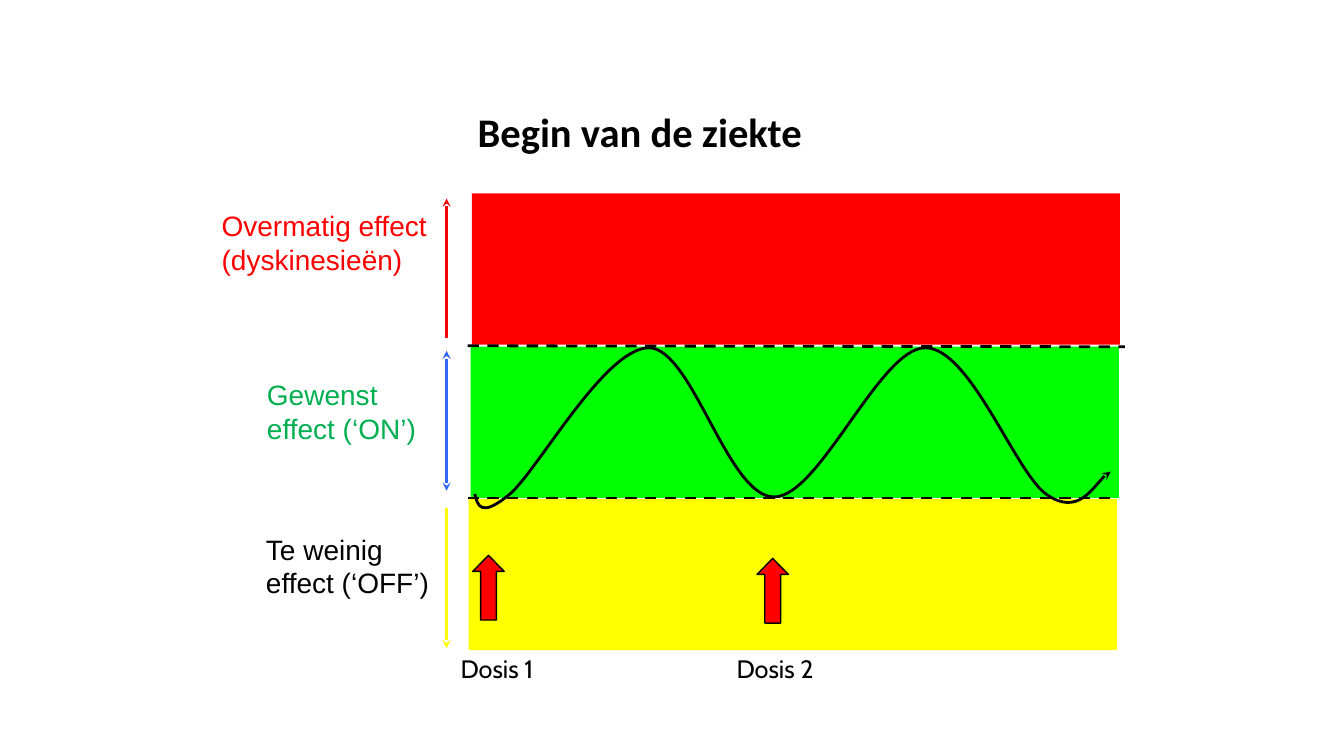
from lxml import etree
from pptx import Presentation
from pptx import util as u
from pptx.dml import color
from pptx.enum import dml, shapes, text
from pptx.oxml import ns

Pt = u.Pt
rgb = color.RGBColor.from_string


def add_text(wording, box, font_name, size, hex_color, align, bold=False, inset=True):
    shape = slide.shapes.add_textbox(*map(Pt, box))
    frame = shape.text_frame
    frame.word_wrap = True
    if not inset:
        frame.margin_left = frame.margin_right = frame.margin_top = frame.margin_bottom = 0
        frame.vertical_anchor = text.MSO_ANCHOR.MIDDLE
    paragraph = frame.paragraphs[0]
    paragraph.text = wording
    paragraph.alignment = align
    paragraph.font.name = font_name
    paragraph.font.size = Pt(size)
    paragraph.font.bold = bold
    paragraph.font.color.rgb = rgb(hex_color)


def style_line(shape, hex_color, width, ends=()):
    shape.line.color.rgb = rgb(hex_color)
    shape.line.width = Pt(width)
    line = shape.line._get_or_add_ln()
    for end in ends:
        etree.SubElement(line, ns.qn(f"a:{end}"), type="stealth")


presentation = Presentation()
presentation.slide_width, presentation.slide_height = Pt(960), Pt(540)
slide = presentation.slides.add_slide(presentation.slide_layouts[6])
left, center = text.PP_ALIGN.LEFT, text.PP_ALIGN.CENTER

add_text("Begin van de ziekte ", (117.4, 72.7, 686, 42.5), "Calibri", 29, "000000",
         center, bold=True, inset=False)

bands = [(334.8, 356.4, "FFFF00"), (337, 138.2, "FF0000"), (336.2, 247.7, "00FF00")]
for x, y, fill in bands:
    band = slide.shapes.add_shape(shapes.MSO_SHAPE.RECTANGLE, Pt(x), Pt(y), Pt(463), Pt(108))
    band.shadow.inherit = False
    band.fill.solid()
    band.fill.fore_color.rgb = rgb(fill)
    band.line.fill.background()

labels = [
    ("Overmatig effect (dyskinesieën)", 151.2, 145.4, 188.6, "FF0000"),
    ("Gewenst effect (‘ON’)", 183.6, 266.4, 138.2, "00B050"),
    ("Te weinig effect (‘OFF’)", 182.9, 376.6, 138.2, "000000"),
]
for wording, x, y, width, hex_color in labels:
    add_text(wording, (x, y, width, 55.4), "Arial", 20, hex_color, left)

lines = [
    (319, 141.8, 319, 241.2, "FF0000", 1.75, ["headEnd"], False),
    (319, 250.6, 319, 350.6, "3366FF", 1.75, ["headEnd", "tailEnd"], False),
    (319, 463, 319, 362.9, "FFFF00", 1.75, ["headEnd"], False),
    (334, 247, 803.5, 247.7, "000000", 2, [], True),
    (334, 355.7, 797.8, 355.7, "000000", 2, [], True),
]
for x1, y1, x2, y2, hex_color, width, ends, dashed in lines:
    connector = slide.shapes.add_connector(
        shapes.MSO_CONNECTOR.STRAIGHT, Pt(x1), Pt(y1), Pt(x2), Pt(y2))
    if dashed:
        connector.line.dash_style = dml.MSO_LINE.DASH
    style_line(connector, hex_color, width, ends)
    etree.SubElement(connector._element.spPr, ns.qn("a:effectLst"))

doses = [("Dosis 1", 337.7, 396.7, 315.4), ("Dosis 2", 540.7, 398.9, 514.1)]
for wording, arrow_x, arrow_y, label_x in doses:
    arrow = slide.shapes.add_shape(
        shapes.MSO_SHAPE.UP_ARROW, Pt(arrow_x), Pt(arrow_y), Pt(22.5), Pt(46.2))
    arrow.shadow.inherit = False
    arrow.adjustments[1] = 0.51
    arrow.fill.solid()
    arrow.fill.fore_color.rgb = rgb("FF0000")
    style_line(arrow, "000000", 1)
    add_text(wording, (label_x, 463, 79.2, 28.8), "Cabin", 18, "000000", center)

wave = [
    (4.71, 4.9), (4.74, 5.02), (4.77, 5.14), (5.06, 4.9),
    (5.34, 4.66), (6, 3.45), (6.44, 3.45),
    (6.87, 3.46), (7.22, 4.93), (7.68, 4.93),
    (8.13, 4.93), (8.73, 3.45), (9.18, 3.45),
    (9.63, 3.45), (10.08, 4.71), (10.39, 4.91),
    (10.7, 5.12), (10.91, 4.72), (11.02, 4.68),
]
points = [(Pt(x * 72), Pt(y * 72)) for x, y in wave]
builder = slide.shapes.build_freeform(*points[0])
builder.add_line_segments(points[1:], close=False)
curve = builder.convert_to_shape()
curve.shadow.inherit = False
curve.fill.background()
style_line(curve, "000000", 2, ["tailEnd"])

segments = list(curve._element.iter(ns.qn("a:lnTo")))
outline = segments[0].getparent()
for start in range(0, len(segments), 3):
    bezier = etree.SubElement(outline, ns.qn("a:cubicBezTo"))
    for segment in segments[start:start + 3]:
        bezier.append(segment[0])
        outline.remove(segment)

presentation.save("out.pptx")
